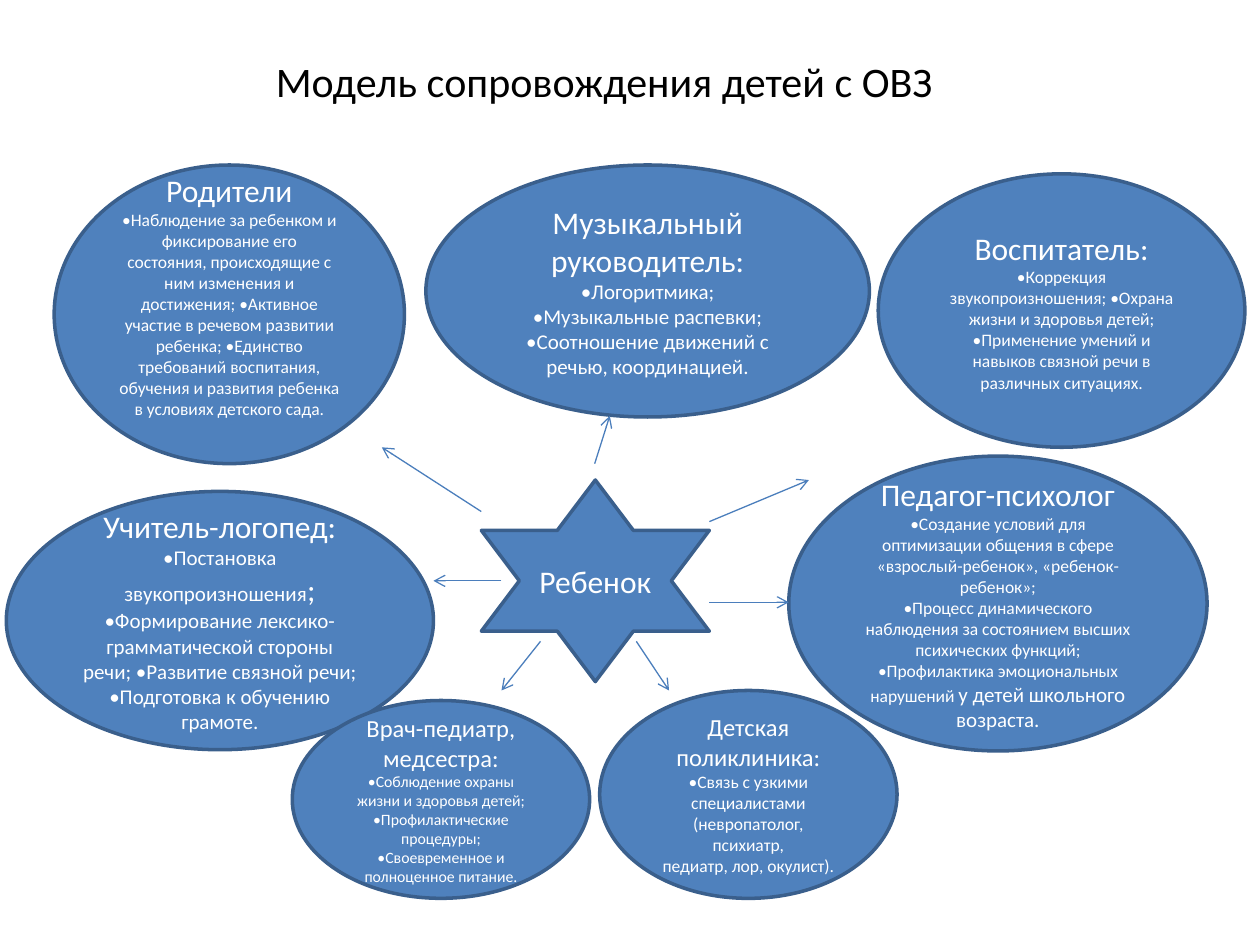
from lxml import etree
from pptx import Presentation
from pptx.dml.color import RGBColor
from pptx.enum.shapes import MSO_CONNECTOR, MSO_SHAPE
from pptx.enum.text import MSO_ANCHOR, PP_ALIGN
from pptx.oxml.ns import qn
from pptx.util import Inches, Pt

FILL, OUTLINE, ARROW = "4F81BD", "3A5F8C", "4B7EBC"


def color(target, value):
    target.rgb = RGBColor.from_string(value)


def write(frame, paragraphs, ink="FFFFFF"):
    """Fill a frame with centred paragraphs, each a list of (text, size) runs."""
    frame.word_wrap = True
    frame.vertical_anchor = MSO_ANCHOR.MIDDLE
    for i, runs in enumerate(paragraphs):
        paragraph = frame.paragraphs[0] if i == 0 else frame.add_paragraph()
        paragraph.alignment = PP_ALIGN.CENTER
        for text, size in runs:
            run = paragraph.add_run()
            run.text = text
            run.font.name = "Calibri"
            run.font.size = Pt(size)
            color(run.font.color, ink)


prs = Presentation()
prs.slide_width, prs.slide_height = Inches(10), Inches(7.5)
slide = prs.slides.add_slide(prs.slide_layouts[5])

title = slide.shapes.title
title.left, title.top = Inches(0.59), Inches(0.13)
title.width, title.height = Inches(8.41), Inches(1.02)
write(title.text_frame, [[("Модель сопровождения детей с ОВЗ", 24)]], ink="000000")

# Each participant: preset, (left, top, width, height), paragraphs of runs
OVAL, STAR = MSO_SHAPE.OVAL, MSO_SHAPE.STAR_6_POINT
participants = [
    (OVAL, (0.43, 1.31, 2.78, 2.37), [
        [("Родители", 18)],
        [("•Наблюдение за ребенком и фиксирование его", 10)],
        [("состояния, происходящие с ним изменения и достижения; "
          "•Активное участие в речевом развитии ребенка; "
          "•Единство требований воспитания, обучения и развития ребенка "
          "в условиях детского сада.", 10)]]),
    (OVAL, (6.97, 1.38, 2.91, 2.17), [
        [("Воспитатель:", 18)],
        [("•Коррекция звукопроизношения; •Охрана жизни и здоровья детей;", 10)],
        [("•Применение умений и навыков связной речи в различных ситуациях.", 10)]]),
    (OVAL, (0.05, 3.9, 3.39, 2.05), [
        [("Учитель-логопед:", 18)],
        [("•Постановка звукопроизношения", 12), (";", 18)],
        [("•Формирование лексико-грамматической стороны речи; "
          "•Развитие связной речи;", 12)],
        [("•Подготовка к обучению грамоте.", 12)]]),
    (OVAL, (6.26, 3.62, 3.32, 2.34), [
        [("Педагог-психолог", 18)],
        [("•Создание условий для оптимизации общения в сфере "
          "«взрослый-ребенок», «ребенок-ребенок»;", 10)],
        [("•Процесс динамического наблюдения за состоянием "
          "высших психических функций;", 10)],
        [("•Профилактика эмоциональных нарушений ", 10),
         ("у детей школьного возраста.", 12)]]),
    (OVAL, (3.38, 1.31, 3.52, 2), [
        [("Музыкальный руководитель:", 18)],
        [("•Логоритмика;", 12)],
        [("•Музыкальные распевки;", 12)],
        [("•Соотношение движений с речью, координацией.", 12)]]),
    (OVAL, (2.32, 5.56, 2.36, 1.57), [
        [("Врач-педиатр,", 14)],
        [("медсестра:", 14)],
        [("•Соблюдение охраны жизни и здоровья детей;", 9)],
        [("•Профилактические процедуры;", 9)],
        [("•Своевременное и полноценное питание.", 9)]]),
    (OVAL, (4.76, 5.48, 2.36, 1.65), [
        [("Детская поликлиника:", 14)],
        [("•Связь с узкими специалистами", 10)],
        [("(невропатолог, психиатр,", 10)],
        [("педиатр, лор, окулист).", 10)]]),
    (STAR, (3.82, 3.81, 1.81, 1.6), [[("Ребенок", 18)]]),
]
bubbles = []
for preset, box, paragraphs in participants:
    bubble = slide.shapes.add_shape(preset, *map(Inches, box))
    bubble.shadow.inherit = False
    bubble.fill.solid()
    color(bubble.fill.fore_color, FILL)
    color(bubble.line.color, OUTLINE)
    bubble.line.width = Pt(2)
    write(bubble.text_frame, paragraphs)
    bubbles.append(bubble)

# The parents' text sits above the middle of its oval
bubbles[0].text_frame.margin_bottom = Inches(0.35)

# Arrows from the child outwards: start x, start y, end x, end y
arrows = [
    (3.82, 4.06, 3.03, 3.55),
    (5.63, 4.14, 6.42, 3.81),
    (4.29, 5.09, 3.98, 5.48),
    (5.05, 5.09, 5.31, 5.48),
    (4.72, 3.68, 4.84, 3.3),
    (3.98, 4.61, 3.44, 4.61),
    (5.63, 4.78, 6.26, 4.78),
]
for ends in arrows:
    arrow = slide.shapes.add_connector(MSO_CONNECTOR.STRAIGHT, *map(Inches, ends))
    color(arrow.line.color, ARROW)
    arrow.line.width = Pt(0.75)
    etree.SubElement(arrow.line._get_or_add_ln(), qn("a:tailEnd"), type="arrow")
    etree.SubElement(arrow._element.spPr, qn("a:effectLst"))

prs.save("out.pptx")
